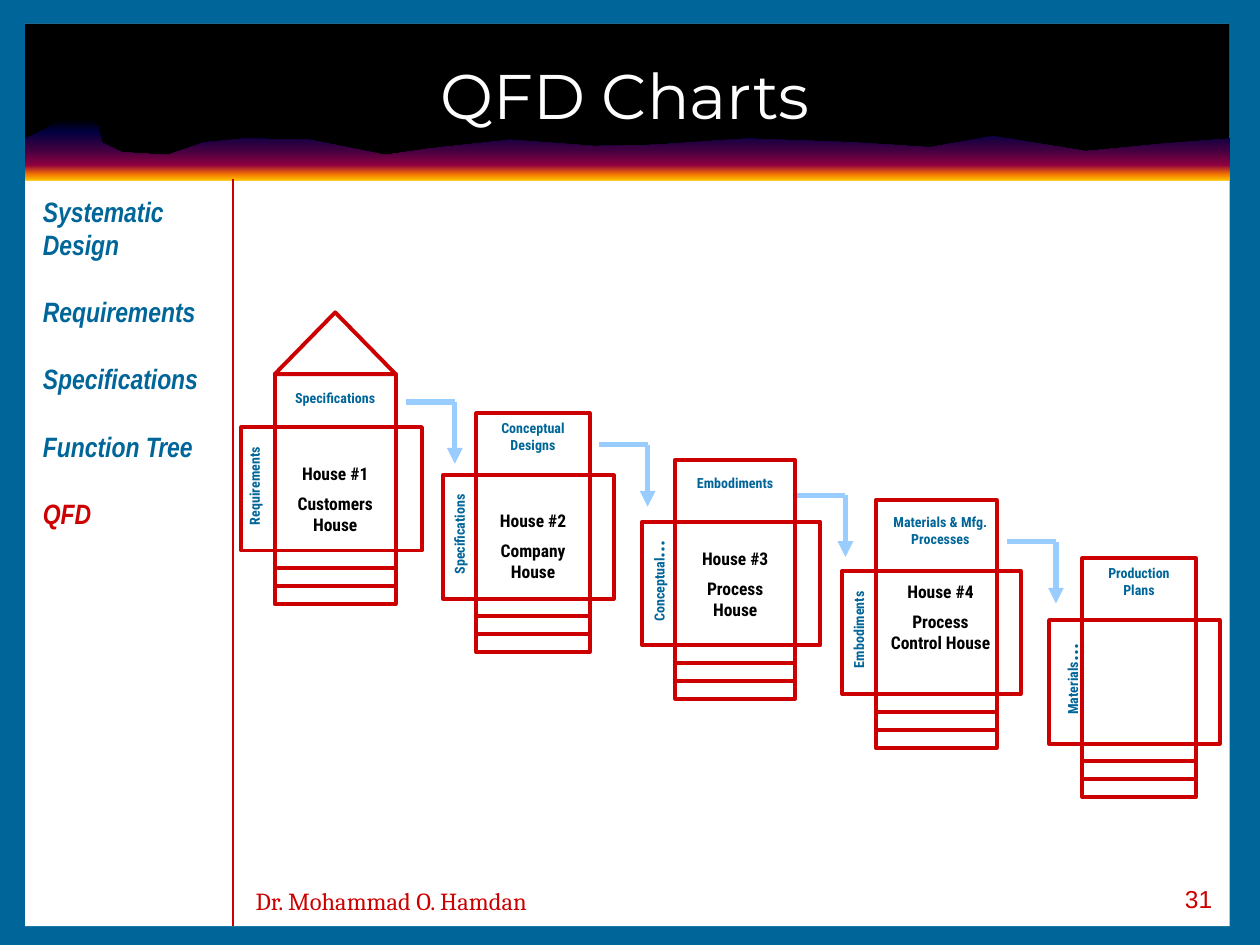
from collections import namedtuple

from lxml import etree
from pptx import Presentation
from pptx.dml.color import RGBColor
from pptx.enum import shapes, text
from pptx.oxml.ns import qn
from pptx.util import Pt

BLUE = RGBColor(0x00, 0x66, 0x99)
RED = RGBColor(0xCC, 0x00, 0x00)
SKY = RGBColor(0x99, 0xCC, 0xFF)
WHITE = RGBColor(0xFF, 0xFF, 0xFF)
BLACK = RGBColor(0x00, 0x00, 0x00)
GLOW = [(0, "000000"), (20, "000040"), (50, "400040"),
        (75, "8F0040"), (90, "F27300"), (100, "FFBF00")]
RIDGE = [(702.7, 79.2), (665.3, 82.1), (620.6, 86.4), (567.4, 77.8), (531.4, 84.2),
         (487.4, 81.4), (427, 79.2), (373.7, 82.8), (339.8, 83.5), (291.6, 79.9),
         (244.8, 85), (220.3, 88.6), (177.1, 79.9), (139.7, 79.2), (116.6, 81.4),
         (95.8, 88.6), (69.8, 87.1), (58.3, 81.4), (56.2, 72), (51.1, 68.4),
         (35.3, 69.1), (28.8, 71.3), (25.2, 74.2), (14.4, 79.2)]
BODY, STEP, SIDE = 70.6, 10.2, 19
CORE = "Roboto Condensed"

# box: left, top, width and height of the head; drop: head text offset;
# shift: side text centre from the left wall; gap: space above the house name
House = namedtuple("House", "box head side name drop shift gap wide wing")
HOUSES = [
    House((157, 213.8, 69.1, 30.2), "Specifications", "Requirements",
          ("House #1", "Customers House"), 5, -11.5, 32.5, 0, 15),
    House((272.2, 236.2, 64.8, 35.3), "Conceptual Designs", "Specifications",
          ("House #2", "Company House"), 0, -9.5, 32.5, 0, 13.7),
    House((385.9, 262.8, 68.4, 35.3), "Embodiments", "Conceptual...",
          ("House #3", "Process House"), 5, -10.8, 32.5, 0, 14.4),
    House((500.4, 285.8, 69.1, 40.3), "Materials & Mfg. Processes", "Embodiments",
          ("House #4", "Process Control House"), 4.3, -9.5, 19.3, 5, 13.7),
    House((618.5, 319, 64.8, 35.3), "Production Plans", "Materials...",
          (), 0, -7.2, 0, 0, 13.7),
]
BENDS = [(259.9, 229.7), (370.1, 254.2), (483.1, 283), (603.4, 309.6)]
TOPICS = ["Systematic Design", "Requirements", "Specifications", "Function Tree", "QFD"]


def write(para, words, font, size, color, bold=None, italic=None,
          align=text.PP_ALIGN.LEFT, before=0, after=0):
    """Add one formatted run to a paragraph and return it."""
    para.alignment = align
    para.space_before, para.space_after = Pt(before), Pt(after)
    run = para.add_run()
    run.text = words
    face = run.font
    face.name, face.size, face.bold, face.italic = font, Pt(size), bold, italic
    face.color.rgb = color
    return run


def place(item, x, y, w, h):
    item.left, item.top, item.width, item.height = Pt(x), Pt(y), Pt(w), Pt(h)


def frame(group, x, y, w, h):
    """Add an empty wrapping text box."""
    box = group.add_textbox(Pt(x), Pt(y), Pt(w), Pt(h))
    box.text_frame.word_wrap = True
    return box


def block(group, x, y, w, h, fill=None, line=None, kind=shapes.MSO_SHAPE.RECTANGLE):
    item = group.add_shape(kind, Pt(x), Pt(y), Pt(w), Pt(h))
    item.shadow.inherit = False
    if fill is None:
        item.fill.background()
    else:
        item.fill.solid()
        item.fill.fore_color.rgb = fill
    if line is None:
        item.line.fill.background()
    else:
        item.line.color.rgb = line
        item.line.width = Pt(2.25)
    return item


def link(group, x1, y1, x2, y2, color, width, arrow=False):
    item = group.add_connector(shapes.MSO_CONNECTOR.STRAIGHT, Pt(x1), Pt(y1), Pt(x2), Pt(y2))
    item.line.color.rgb = color
    item.line.width = Pt(width)
    if arrow:
        etree.SubElement(item.line._get_or_add_ln(), qn("a:tailEnd"), type="triangle")
    etree.SubElement(item.element.spPr, qn("a:effectLst"))


def ridge(group):
    """Draw the glowing skyline below the title band."""
    pen = group.build_freeform(Pt(14.4), Pt(103), scale=1)
    pen.add_line_segments([(Pt(x), Pt(y)) for x, y in [(702.7, 103)] + RIDGE], close=True)
    item = pen.convert_to_shape()
    item.shadow.inherit = False
    item.line.fill.background()
    item.fill.gradient()
    item.fill.gradient_angle = 270
    stops = item.element.spPr.find(qn("a:gradFill")).find(qn("a:gsLst"))
    for old in list(stops):
        stops.remove(old)
    for spot, color in GLOW:
        stop = etree.SubElement(stops, qn("a:gs"), pos=str(spot * 1000))
        etree.SubElement(stop, qn("a:srgbClr"), val=color)


def backdrop(group, w, h):
    block(group, 0, 0, w, h, BLUE)
    block(group, 14.4, 13.7, 688.3, 515.5, WHITE)
    block(group, 14.4, 13.7, 688.3, 88.6, BLACK)
    ridge(group)
    link(group, 133.2, 529.2, 133.2, 102.2, RED, 1)


def heading(item, x, y, w, h):
    place(item, x, y, w, h)
    item.element.getparent().append(item.element)
    item.text_frame.vertical_anchor = text.MSO_ANCHOR.MIDDLE
    write(item.text_frame.paragraphs[0], "QFD Charts", "Montserrat", 36, WHITE,
          align=text.PP_ALIGN.CENTER)


def topics(item, x, y, w, h):
    place(item, x, y, w, h)
    item.element.getparent().append(item.element)
    body = item.text_frame
    body.auto_size = text.MSO_AUTO_SIZE.NONE
    for i, words in enumerate(TOPICS):
        para = body.paragraphs[0] if i == 0 else body.add_paragraph()
        props = para._p.get_or_add_pPr()
        props.set("marL", "0")
        props.set("indent", "0")
        etree.SubElement(props, qn("a:buNone"))
        write(para, words, "Arial Narrow", 16, RED if words == "QFD" else BLUE,
              bold=True, italic=True, before=8 if i else 0, after=11.2)


def house(group, plan):
    x, y, w, h = plan.box
    floor = y + h
    mid = text.PP_ALIGN.CENTER
    block(group, x, floor, w, BODY, line=RED)
    label = frame(group, x, y + plan.drop, w + plan.wide, h + BODY - plan.drop).text_frame
    write(label.paragraphs[0], plan.head, CORE, 8, BLUE, bold=True, align=mid)
    for i, words in enumerate(plan.name):
        write(label.add_paragraph(), words, CORE, 10, BLACK, bold=True, align=mid,
              before=5 if i else plan.gap)
    block(group, x, y, w, h, line=RED)

    stem = plan.side.rstrip(".")
    dots = plan.side[len(stem):]
    deep = 21.6 if dots else 17.2
    side = frame(group, x + plan.shift - BODY / 2, floor + (BODY - deep) / 2 - 1.5, BODY, deep)
    side.rotation = 270
    para = side.text_frame.paragraphs[0]
    write(para, stem, CORE, 8, BLUE, bold=True, align=mid)
    if dots:
        write(para, dots, CORE, 12, BLUE, bold=True, align=mid)
    wall = block(group, x - (SIDE + BODY) / 2, floor + (BODY - SIDE) / 2, BODY, SIDE, line=RED)
    wall.rotation = 270

    for i in range(3):
        block(group, x, floor + BODY + i * STEP, w, STEP, line=RED)
    block(group, x + w, floor, plan.wing, BODY, line=RED)


def bend(group, x, y):
    """Draw an arrow that runs right to the corner, then down."""
    link(group, x, y, x, y + 35.3, SKY, 3, arrow=True)
    link(group, x - 27.8, y, x, y, SKY, 3)


def footer(group, x, y, w, h):
    page = frame(group, x + w - 150, y, 150, h).text_frame
    write(page.paragraphs[0], "31", "Arial", 14, RED, align=text.PP_ALIGN.RIGHT)
    name = frame(group, x, y + 0.7, 228, h).text_frame
    write(name.paragraphs[0], "Dr. Mohammad O. Hamdan", "Cambria", 14, RED)


def main():
    deck = Presentation()
    deck.slide_width, deck.slide_height = Pt(720), Pt(540)
    slide = deck.slides.add_slide(deck.slide_layouts[1])
    parts = slide.shapes
    backdrop(parts, 720, 540)
    heading(parts.title, 24.5, 15.8, 665.3, 76.3)
    for i, plan in enumerate(HOUSES):
        group = parts.add_group_shape().shapes
        house(group, plan)
        if i == 0:
            x, y, w, _ = plan.box
            block(group, x, y - 35.3, w, 35.3, line=RED,
                  kind=shapes.MSO_SHAPE.ISOSCELES_TRIANGLE)
    for x, y in BENDS:
        bend(parts.add_group_shape().shapes, x, y)
    topics(slide.placeholders[1], 17.3, 107.3, 109.4, 216.7)
    footer(parts, 139, 501.8, 560.8, 26.6)
    deck.save("out.pptx")


if __name__ == "__main__":
    main()
